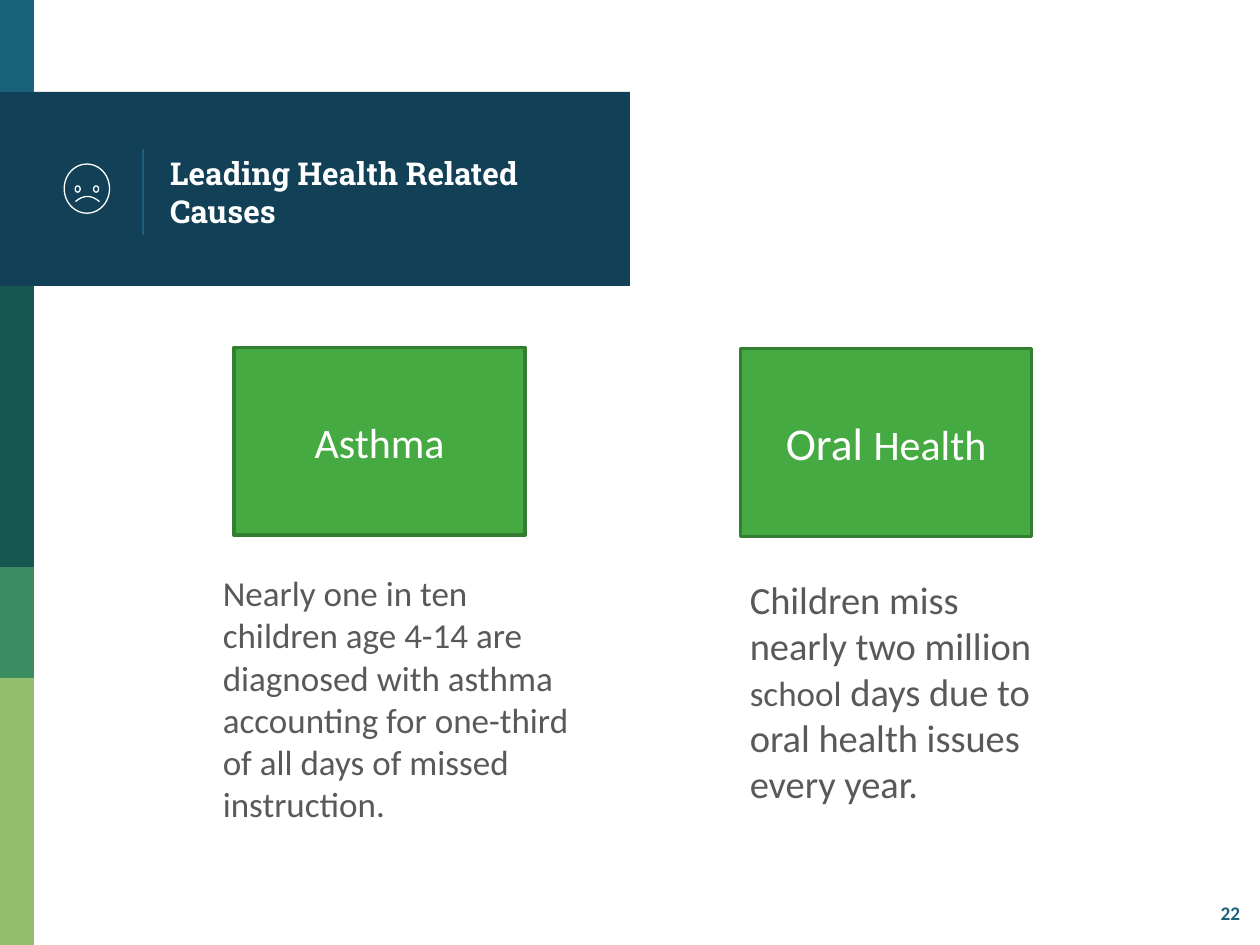
"""Build the slide on leading health related causes of missed school days."""
from dataclasses import dataclass

from lxml.etree import SubElement
from pptx import Presentation
from pptx.dml.color import RGBColor
from pptx.enum.shapes import MSO_CONNECTOR, MSO_SHAPE
from pptx.enum.text import MSO_ANCHOR, PP_ALIGN
from pptx.oxml.ns import qn
from pptx.util import Pt


@dataclass(frozen=True)
class Theme:
    blue: str = "18637B"
    navy: str = "124057"
    white: str = "FFFFFF"
    card: str = "45AA42"
    card_edge: str = "337E31"
    body: str = "595959"
    number: str = "1B637A"
    heading_font: str = "Roboto Slab"
    body_font: str = "Calibri"
    title_size: int = 18
    number_size: int = 11
    thin: float = 0.75
    card_line: int = 2


THEME = Theme()
TITLE = "Leading Health Related Causes"
PAGE_NUMBER = "22"
BANDS = [
    (0, 19.44, 55.44, THEME.blue),
    (52.56, 360, 110.88, THEME.navy),
    (163.44, 19.44, 160.56, "165751"),
    (324, 19.44, 63.36, "3B8D61"),
    (387.36, 19.44, 152.64, "94BF6E"),
]
CARD_SIZE = (166.32, 107.28)
CARDS = [
    ((133.7, 198.6), [("Asthma", 24)]),
    ((423.2, 199.2), [("Oral ", 26), ("Health", 24)]),
]
NOTES = [
    ((120.24, 323.28, 222, 152.64),
     [("Nearly one in ten children age 4-14 are diagnosed with asthma "
       "accounting for one-third of all days of missed instruction.", 20)]),
    ((421.4, 325.44, 184.32, 140.4),
     [("Children miss nearly two million ", 22), ("school", 20),
      (" days due to oral health issues every year.", 22)]),
]
FACE_OVALS = [
    (36.72, 93.74, 25.92, 28.08),
    (42.98, 106.2, 2.88, 3.6),
    (53.5, 106.2, 2.88, 3.6),
]
MOUTH = {"center": 49.97, "half_width": 6.84, "base": 115.2, "rise": 2.88}


def color(value):
    return RGBColor.from_string(value)


def add_box(slide, kind, box, fill=None, line=None, width=THEME.thin):
    shape = slide.shapes.add_shape(kind, *map(Pt, box))
    format_shape(shape, fill, line, width)
    return shape


def format_shape(shape, fill, line, width):
    shape.shadow.inherit = False
    if fill:
        shape.fill.solid()
        shape.fill.fore_color.rgb = color(fill)
    else:
        shape.fill.background()
    if line:
        shape.line.color.rgb = color(line)
        shape.line.width = Pt(width)
    else:
        shape.line.fill.background()


def write(frame, runs, ink, font=THEME.body_font, bold=False, align=PP_ALIGN.LEFT):
    frame.word_wrap = True
    paragraph = frame.paragraphs[0]
    paragraph.alignment = align
    paragraph.font.name = font
    paragraph.font.bold = bold
    paragraph.font.color.rgb = color(ink)
    for text, size in runs:
        run = paragraph.add_run()
        run.text = text
        run.font.size = Pt(size)


def add_text(slide, box, runs, ink, bold=False):
    text_box = slide.shapes.add_textbox(*map(Pt, box))
    write(text_box.text_frame, runs, ink, bold=bold)


def add_banner(slide):
    for top, width, height, fill in BANDS:
        add_box(slide, MSO_SHAPE.RECTANGLE, (0, top, width, height), fill)
    divider = slide.shapes.add_connector(
        MSO_CONNECTOR.STRAIGHT, *map(Pt, (81.8, 84.96, 81.8, 134.4)))
    divider.line.color.rgb = color(THEME.blue)
    divider.line.width = Pt(THEME.thin)
    SubElement(divider.element.spPr, qn("a:effectLst"))


def add_title(slide):
    title = slide.shapes.title
    title.left, title.top, title.width, title.height = map(Pt, (90, 55.44, 252.72, 108))
    frame = title.text_frame
    frame.vertical_anchor = MSO_ANCHOR.MIDDLE
    frame.margin_left = frame.margin_right = Pt(7.2)
    frame.margin_top = frame.margin_bottom = Pt(7.2)
    write(frame, [(TITLE, THEME.title_size)], THEME.white,
          THEME.heading_font, bold=True)
    title.element.getparent().append(title.element)


def add_sad_face(slide):
    for box in FACE_OVALS:
        add_box(slide, MSO_SHAPE.OVAL, box, line=THEME.white)
    steps = [index / 8 for index in range(-8, 9)]
    points = [(Pt(MOUTH["center"] + MOUTH["half_width"] * step),
               Pt(MOUTH["base"] - MOUTH["rise"] * (1 - step ** 2)))
              for step in steps]
    builder = slide.shapes.build_freeform(*points[0])
    builder.add_line_segments(points[1:], close=False)
    format_shape(builder.convert_to_shape(), None, THEME.white, THEME.thin)


def main():
    presentation = Presentation()
    presentation.slide_width, presentation.slide_height = Pt(720), Pt(540)
    slide = presentation.slides.add_slide(presentation.slide_layouts[5])
    add_banner(slide)
    add_text(slide, (690.48, 511.2, 36, 20.88),
             [(PAGE_NUMBER, THEME.number_size)], THEME.number, bold=True)
    add_title(slide)
    for position, runs in CARDS:
        card = add_box(slide, MSO_SHAPE.RECTANGLE, position + CARD_SIZE,
                       THEME.card, THEME.card_edge, THEME.card_line)
        card.text_frame.vertical_anchor = MSO_ANCHOR.MIDDLE
        write(card.text_frame, runs, THEME.white, align=PP_ALIGN.CENTER)
    for box, runs in NOTES:
        add_text(slide, box, runs, THEME.body)
    add_sad_face(slide)
    presentation.save("out.pptx")


if __name__ == "__main__":
    main()
